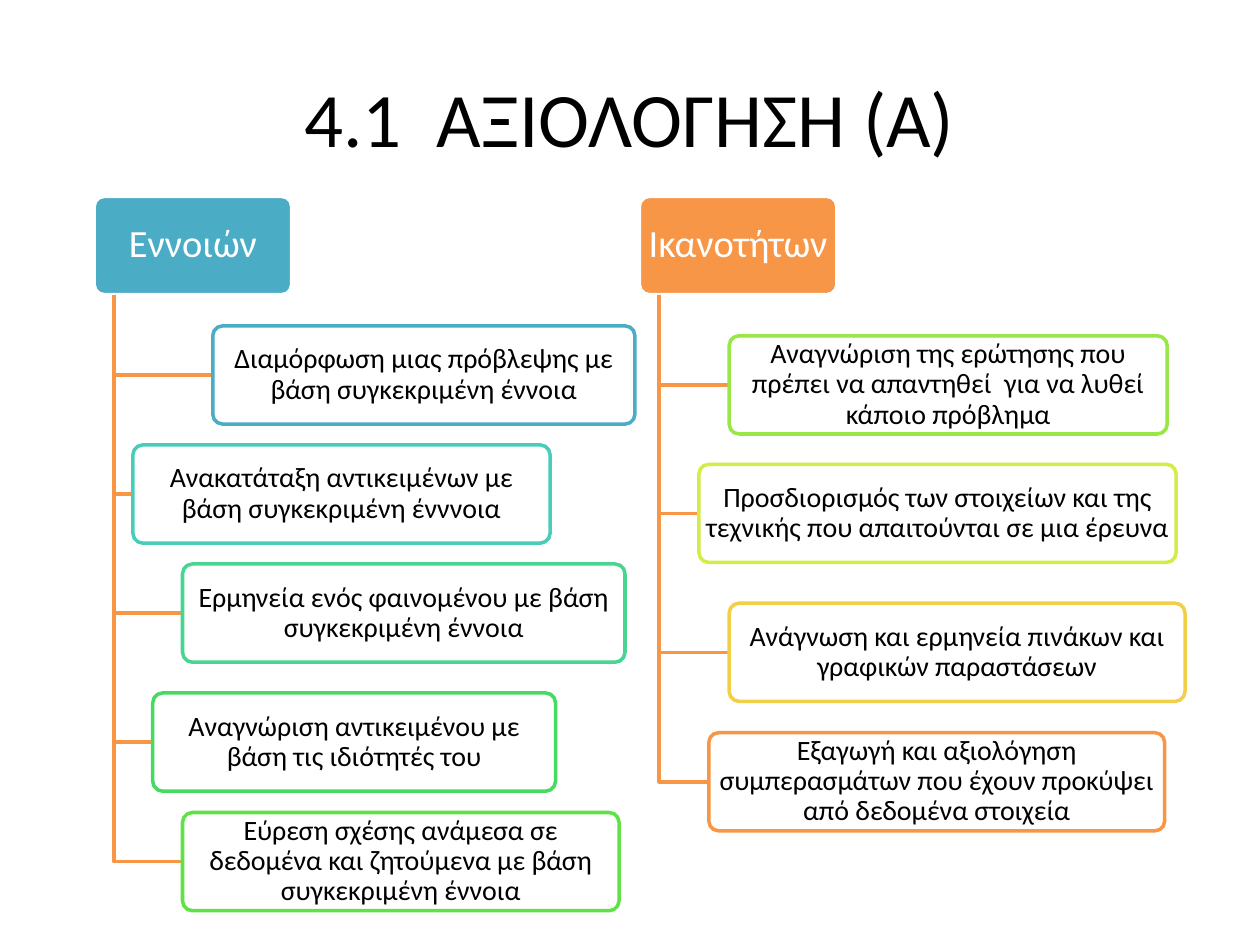
"""Build the assessment slide: two headed trees of concept and skill boxes."""
from lxml.etree import SubElement
from pptx import Presentation
from pptx.dml.color import RGBColor
from pptx.enum.shapes import MSO_SHAPE
from pptx.enum.text import MSO_ANCHOR, PP_ALIGN
from pptx.oxml.ns import qn
from pptx.util import Cm, Pt

BLACK = RGBColor(0x00, 0x00, 0x00)
WHITE = RGBColor(0xFF, 0xFF, 0xFF)
BLUE = RGBColor(0x4B, 0xAC, 0xC6)
TURQUOISE = RGBColor(0x49, 0xCD, 0xBB)
MINT = RGBColor(0x48, 0xD4, 0x91)
GREEN = RGBColor(0x47, 0xDA, 0x61)
LEAF = RGBColor(0x60, 0xE1, 0x46)
LIME = RGBColor(0x98, 0xE7, 0x46)
LEMON = RGBColor(0xD5, 0xEC, 0x46)
GOLD = RGBColor(0xF2, 0xCF, 0x46)
ORANGE = RGBColor(0xF7, 0x96, 0x46)

BOX_HEIGHT = 1.98
HEADER_TOP = 3.96
HEADER_WIDTH = 3.98
TRUNK_OFFSET = 0.4

BRANCHES = [
    ("Εννοιών", 1.9, BLUE, [
        ("Διαμόρφωση μιας πρόβλεψης με βάση συγκεκριμένη έννοια", 4.29, 6.57, 8.51, BLUE),
        ("Ανακατάταξη αντικειμένων με βάση συγκεκριμένη ένννοια", 2.68, 8.97, 8.41, TURQUOISE),
        ("Ερμηνεία ενός φαινομένου με βάση συγκεκριμένη έννοια", 3.68, 11.37, 8.92, MINT),
        ("Αναγνώριση αντικειμένου με βάση τις ιδιότητές του", 3.08, 13.97, 8.12, GREEN),
        ("Εύρεση σχέσης ανάμεσα σε δεδομένα και ζητούμενα με βάση συγκεκριμένη έννοια",
         3.68, 16.38, 8.8, LEAF),
    ]),
    ("Ικανοτήτων", 12.89, ORANGE, [
        ("Αναγνώριση της ερώτησης που πρέπει να απαντηθεί  για να λυθεί κάποιο πρόβλημα",
         14.7, 6.77, 8.83, LIME),
        ("Προσδιορισμός των στοιχείων και της τεχνικής που απαιτούνται σε μια έρευνα",
         14.09, 9.36, 9.62, LEMON),
        ("Ανάγνωση και ερμηνεία πινάκων και γραφικών παραστάσεων", 14.7, 12.16, 9.19, GOLD),
        ("Εξαγωγή και αξιολόγηση συμπερασμάτων που έχουν προκύψει από δεδομένα στοιχεία",
         14.29, 14.77, 9.19, ORANGE),
    ]),
]


def write_text(shape, text, size, color, side=0.25, edge=0.13, spacing=1.0):
    frame = shape.text_frame
    frame.word_wrap = True
    frame.vertical_anchor = MSO_ANCHOR.MIDDLE
    frame.margin_left = frame.margin_right = Cm(side)
    frame.margin_top = frame.margin_bottom = Cm(edge)
    paragraph = frame.paragraphs[0]
    paragraph.alignment = PP_ALIGN.CENTER
    paragraph.line_spacing = spacing
    run = paragraph.add_run()
    run.text = text
    run.font.name = "Calibri"
    run.font.size = Pt(size)
    run.font.color.rgb = color


def add_box(slide, left, top, width, fill, line):
    box = slide.shapes.add_shape(
        MSO_SHAPE.ROUNDED_RECTANGLE, Cm(left), Cm(top), Cm(width), Cm(BOX_HEIGHT))
    box.adjustments[0] = 0.1
    box.shadow.inherit = False
    box.fill.solid()
    box.fill.fore_color.rgb = fill
    box.line.color.rgb = line
    box.line.width = Pt(2)
    return box


presentation = Presentation()
presentation.slide_width = Cm(25.4)
presentation.slide_height = Cm(19.05)
slide = presentation.slides.add_slide(presentation.slide_layouts[6])

title = slide.shapes.add_textbox(Cm(1.27), Cm(0.76), Cm(22.86), Cm(3.18))
write_text(title, "4.1  ΑΞΙΟΛΟΓΗΣΗ (Α)", size=44, color=BLACK)

for heading, header_left, header_color, items in BRANCHES:
    header = add_box(slide, header_left, HEADER_TOP, HEADER_WIDTH, header_color, WHITE)
    write_text(header, heading, size=22, color=WHITE, side=0.13, edge=0.08, spacing=0.9)
    trunk_left = Cm(header_left + TRUNK_OFFSET)
    for text, left, top, width, color in items:
        middle = Cm(top + BOX_HEIGHT / 2)
        builder = slide.shapes.build_freeform(trunk_left, Cm(HEADER_TOP + BOX_HEIGHT))
        builder.add_line_segments([(trunk_left, middle), (Cm(left), middle)], close=False)
        elbow = builder.convert_to_shape()
        elbow.shadow.inherit = False
        elbow.fill.background()
        elbow.line.color.rgb = ORANGE
        elbow.line.width = Pt(2)

        box = add_box(slide, left, top, width, WHITE, color)
        fill_color = box.fill._xPr.find(qn("a:solidFill")).find(qn("a:srgbClr"))
        SubElement(fill_color, qn("a:alpha"), val="90000")
        write_text(box, text, size=16, color=BLACK, side=0.08, edge=0.05, spacing=0.9)

presentation.save("out.pptx")
